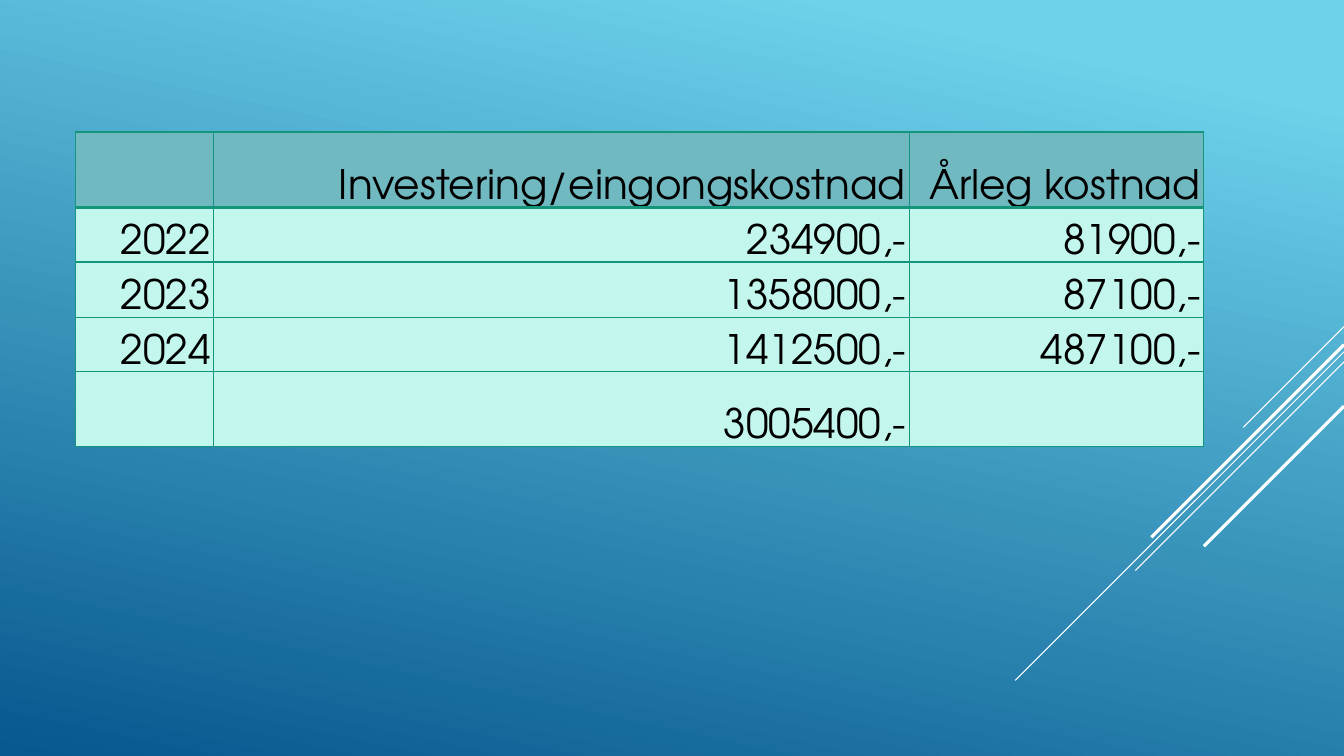
from dataclasses import dataclass

from lxml import etree
from pptx import Presentation
from pptx.dml.color import RGBColor
from pptx.enum.shapes import MSO_CONNECTOR
from pptx.enum.text import MSO_ANCHOR, PP_ALIGN
from pptx.oxml.ns import qn
from pptx.util import Inches, Pt

STRAIGHT = MSO_CONNECTOR.STRAIGHT
BOTTOM = MSO_ANCHOR.BOTTOM
RIGHT = PP_ALIGN.RIGHT


@dataclass(frozen=True)
class Theme:
    font: str = "TeX Gyre Adventor"
    text_size: float = 29
    text: str = "000000"
    sky: str = "6ED2EB"
    deep: str = "06588E"
    header: str = "71B9C1"
    body: str = "C3F7ED"
    border: str = "14967C"
    streak: str = "FFFFFF"


THEME = Theme()
SLIDE_WIDTH, SLIDE_HEIGHT = 13.33, 7.5

COST_ROWS = [
    ("", "Investering/eingongskostnad", "Årleg kostnad"),
    ("2022", "234900,-", "81900,-"),
    ("2023", "1358000,-", "87100,-"),
    ("2024", "1412500,-", "487100,-"),
    ("", "3005400,-", ""),
]
COLUMN_WIDTHS = [1.37, 6.9, 2.92]
ROW_HEIGHTS = [0.75, 0.54, 0.55, 0.54, 0.74]

# Top at the right edge, run to the lower left, line width in points
STREAKS = [
    (3.24, 1.0, 0.75),
    (3.49, 3.26, 0.75),
    (3.59, 2.07, 0.75),
    (3.42, 1.91, 2.25),
    (4.03, 1.39, 2.25),
]


def color(value):
    return RGBColor.from_string(value)


def paint_background(slide):
    fill = slide.background.fill
    fill.gradient()
    fill.gradient_angle = 258
    stops = zip(fill.gradient_stops, [(0.1, THEME.sky), (1, THEME.deep)])
    for stop, (position, value) in stops:
        stop.position = position
        stop.color.rgb = color(value)


def add_streaks(slide, right):
    """Draw the 45-degree lines that run down and left from the right edge."""
    group = slide.shapes.add_group_shape()
    for top, run, width in STREAKS:
        line = group.shapes.add_connector(
            STRAIGHT, Inches(right), Inches(top), Inches(right - run), Inches(top + run)
        )
        line.line.color.rgb = color(THEME.streak)
        line.line.width = Pt(width)
        etree.SubElement(line._element.spPr, qn("a:effectLst"))


def set_borders(cell, top, bottom):
    """Border all four sides; top and bottom are widths in points."""
    properties = cell._tc.get_or_add_tcPr()
    for side, width in (("L", 1), ("R", 1), ("T", top), ("B", bottom)):
        line = etree.SubElement(properties, qn(f"a:ln{side}"), w=str(Pt(width)))
        fill = etree.SubElement(line, qn("a:solidFill"))
        etree.SubElement(fill, qn("a:srgbClr"), val=THEME.border)


def write_cell(cell, text):
    cell.vertical_anchor = BOTTOM
    cell.margin_left = cell.margin_right = cell.margin_top = Inches(0.03)
    cell.margin_bottom = 0
    cell.text = text
    paragraph = cell.text_frame.paragraphs[0]
    paragraph.alignment = RIGHT
    paragraph.font.name = THEME.font
    paragraph.font.size = Pt(THEME.text_size)
    paragraph.font.color.rgb = color(THEME.text)


def add_cost_table(slide, left, top):
    table = slide.shapes.add_table(
        len(COST_ROWS), len(COLUMN_WIDTHS), Inches(left), Inches(top),
        Inches(sum(COLUMN_WIDTHS)), Inches(sum(ROW_HEIGHTS)),
    ).table
    for column, width in zip(table.columns, COLUMN_WIDTHS):
        column.width = Inches(width)
    for row, height in zip(table.rows, ROW_HEIGHTS):
        row.height = Inches(height)
    for row_index, texts in enumerate(COST_ROWS):
        for column_index, text in enumerate(texts):
            cell = table.cell(row_index, column_index)
            set_borders(
                cell,
                top=2 if row_index == 1 else 1,
                bottom=2 if row_index == 0 else 1,
            )
            cell.fill.solid()
            cell.fill.fore_color.rgb = color(THEME.body if row_index else THEME.header)
            write_cell(cell, text)


def main():
    presentation = Presentation()
    presentation.slide_width = Inches(SLIDE_WIDTH)
    presentation.slide_height = Inches(SLIDE_HEIGHT)
    slide = presentation.slides.add_slide(presentation.slide_layouts[6])
    paint_background(slide)
    add_streaks(slide, right=SLIDE_WIDTH)
    add_cost_table(slide, left=0.75, top=1.31)
    presentation.save("out.pptx")


if __name__ == "__main__":
    main()
